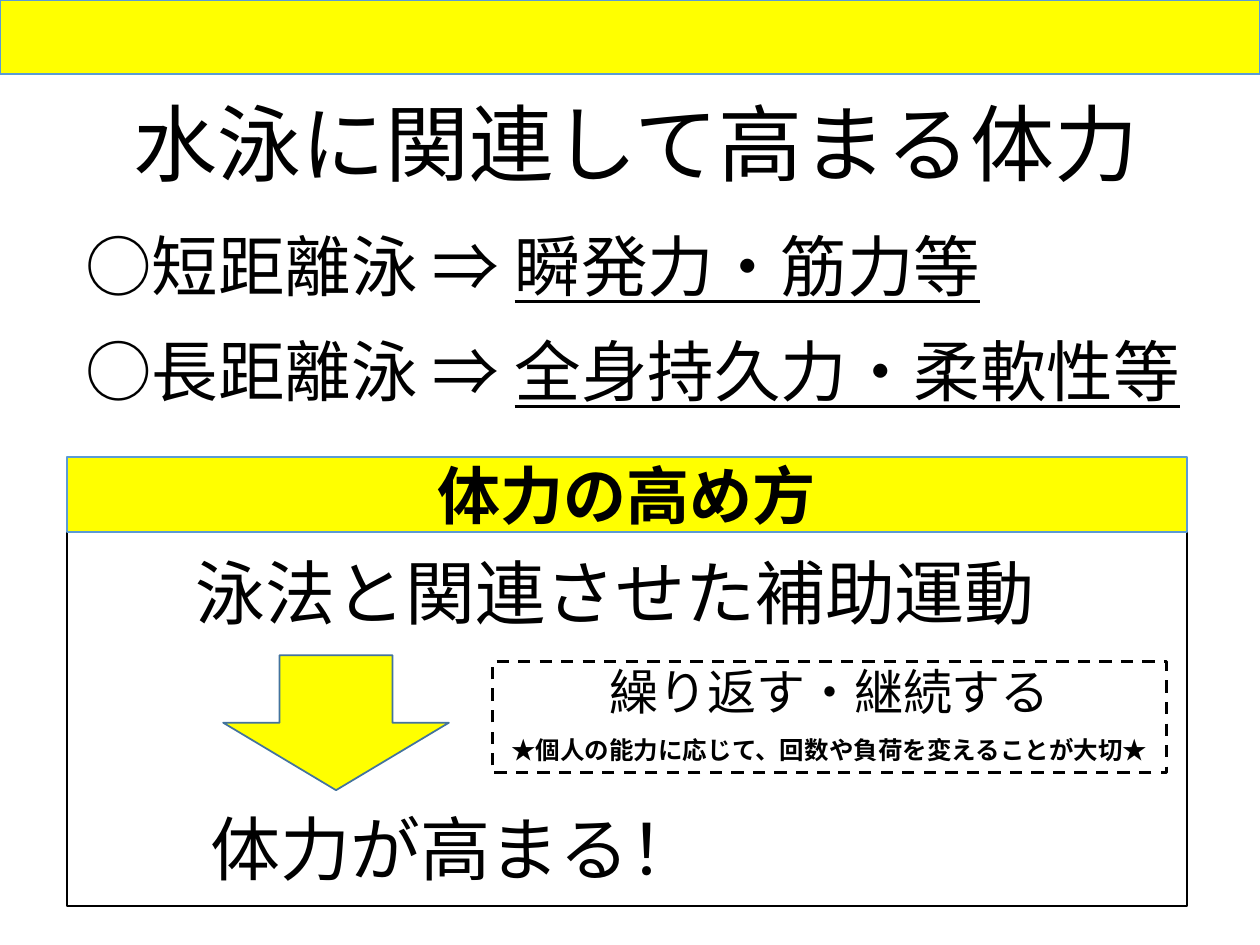
from pptx import Presentation
from pptx import util as u
from pptx.dml.color import RGBColor
from pptx.enum import dml, shapes, text

COLORS = {"ink": "000000", "band": "FFFF00", "band_edge": "5B9BD5", "arrow_edge": "43739E"}
FONT = "Calibri"
LEFT, CENTER = text.PP_ALIGN.LEFT, text.PP_ALIGN.CENTER
PARA = {"line_spacing": 0.9, "space_before": u.Pt(10)}
PLAIN = {"line_spacing": 1.0, "space_before": u.Pt(0)}
FLOWING = {"word_wrap": True, "auto_size": text.MSO_AUTO_SIZE.SHAPE_TO_FIT_TEXT,
           "vertical_anchor": text.MSO_ANCHOR.TOP}
UNWRAPPED = {**FLOWING, "word_wrap": False}
CENTRED = {"word_wrap": True, "vertical_anchor": text.MSO_ANCHOR.MIDDLE}


def color(name):
    return RGBColor.from_string(COLORS[name])


def set_values(target, values):
    for name, value in values.items():
        setattr(target, name, value)


def write(box, paragraphs, align=LEFT, frame=FLOWING, spacing=PARA):
    """Each paragraph is a list of (words, font values)."""
    body = box.text_frame
    set_values(body, frame)
    for index, spans in enumerate(paragraphs):
        para = body.add_paragraph() if index else body.paragraphs[0]
        set_values(para, {"alignment": align, **spacing})
        for words, font in spans:
            span = para.add_run()
            span.text = words
            set_values(span.font, {"name": FONT, **font})
            span.font.color.rgb = color("ink")


def add_text(page, area, spans, **layout):
    box = page.shapes.add_textbox(*map(u.Cm, area))
    write(box, [spans], **layout)


def add_figure(page, kind, area, edge, fill=None, width=1):
    figure = page.shapes.add_shape(kind, *map(u.Cm, area))
    figure.shadow.inherit = False
    if fill:
        figure.fill.solid()
        figure.fill.fore_color.rgb = color(fill)
    else:
        figure.fill.background()
    figure.line.color.rgb = color(edge)
    figure.line.width = u.Pt(width)
    return figure


def main():
    deck = Presentation()
    deck.slide_width, deck.slide_height = u.Cm(25.4), u.Cm(19.05)
    page = deck.slides.add_slide(deck.slide_layouts[6])
    rect = shapes.MSO_SHAPE.RECTANGLE

    # Frame, title and top band
    add_figure(page, rect, (1.35, 10.41, 22.58, 7.85), "ink")
    add_text(page, (2.31, 1.96, 21.03, 2.11),
             [("水泳に関連して高まる体力", {"size": u.Pt(48)})], align=CENTER, frame=UNWRAPPED)
    add_figure(page, rect, (0, 0, 25.4, 1.5), "band_edge", "band")

    # Swimming distances and the fitness they build
    distances = [("○短距離泳 ⇒ ", "瞬発力・筋力等"),
                 ("○長距離泳 ⇒ ", "全身持久力・柔軟性等")]
    for row, (distance, fitness) in enumerate(distances):
        size = {"size": u.Pt(38)}
        add_text(page, (1.47, 4.6 + 2.11 * row, 22.99, 1.73),
                 [(distance, size), (fitness, {**size, "underline": True})])

    # From exercise to result
    add_text(page, (1.47, 11.15, 21.87, 1.8),
             [("泳法と関連させた補助運動", {"size": u.Pt(40)})], align=CENTER)
    add_figure(page, shapes.MSO_SHAPE.DOWN_ARROW, (4.5, 13.21, 4.55, 2.72), "arrow_edge", "band")
    advice = add_figure(page, rect, (9.93, 13.34, 13.59, 2.24), "ink", width=1.75)
    advice.line.dash_style = dml.MSO_LINE.DASH
    write(advice, [
        [("繰り返す・継続する", {"size": u.Pt(28)})],
        [("★個人の能力に応じて、回数や負荷を変えることが大切★", {"size": u.Pt(14), "bold": True})],
    ], align=CENTER)
    add_text(page, (3.99, 16.31, 12.47, 1.8), [("体力が高まる！", {"size": u.Pt(40)})])

    # Heading band of the frame
    heading = add_figure(page, rect, (1.35, 9.22, 22.58, 1.5), "band_edge", "band")
    write(heading, [[("体力の高め方", {"size": u.Pt(36), "bold": True})]],
          align=CENTER, frame=CENTRED, spacing=PLAIN)

    deck.save("out.pptx")


if __name__ == "__main__":
    main()
